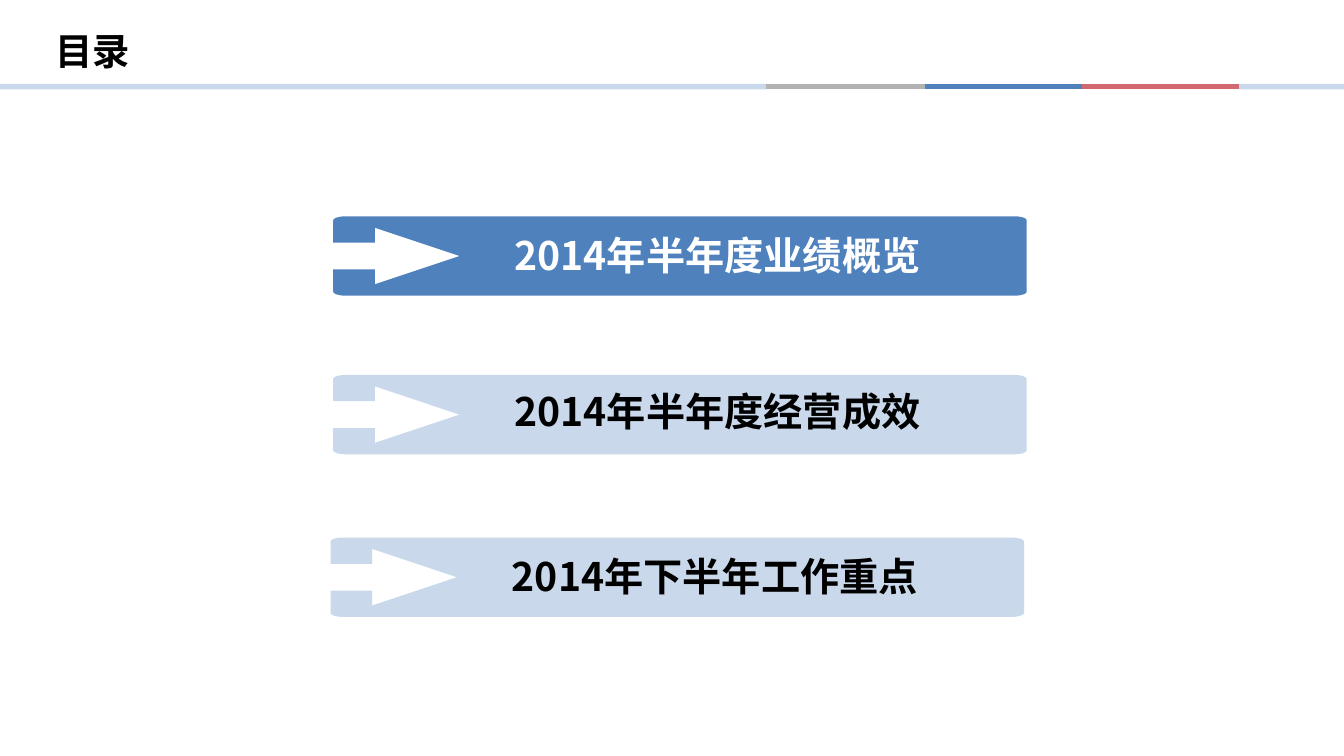
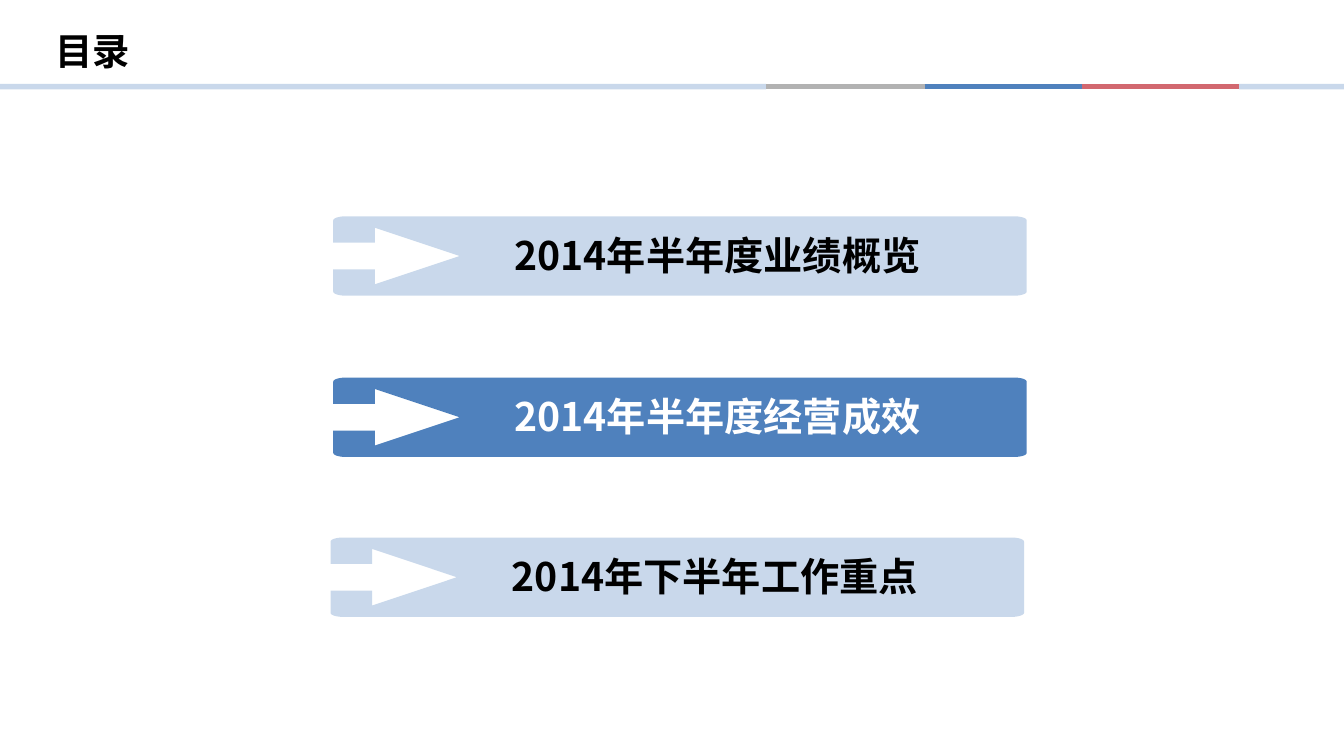
"""Build the two agenda slides, each highlighting one chapter."""
from math import cos, pi, sin

from lxml.etree import SubElement
from pptx import Presentation
from pptx.dml.color import RGBColor
from pptx.enum.shapes import MSO_CONNECTOR
from pptx.enum.text import MSO_ANCHOR, MSO_AUTO_SIZE, PP_ALIGN
from pptx.oxml.ns import qn
from pptx.util import Inches, Pt

BLUE = RGBColor(0x4F, 0x81, 0xBD)
RED = RGBColor(0xD2, 0x68, 0x70)
GRAY = RGBColor(0xB2, 0xB2, 0xB2)
BLACK = RGBColor(0, 0, 0)
WHITE = RGBColor(255, 255, 255)
FONT = "Noto Sans CJK SC"
PALE = 30

TITLE = "目录"
CHAPTERS = ["2014年半年度业绩概览", "2014年半年度经营成效", "2014年下半年工作重点"]
BAR_LEFTS = [2.48, 2.48, 2.46]
AGENDAS = [
    {"active": 0, "bar_tops": [1.61, 2.79, 4], "text_tops": [1.67, 2.83, 4.06]},
    {"active": 1, "bar_tops": [1.61, 2.81, 4], "text_tops": [1.67, 2.87, 4.06]},
]
RULE_TOP = Pt(46.4)
RULE_STOPS = [0, 5.7, 6.88, 8.05, 9.22, 10]
RULE_COLORS = [(BLUE, PALE), (GRAY, 100), (BLUE, 100), (RED, 100), (BLUE, PALE)]

SLIDE_WIDTH = Inches(10)
SLIDE_HEIGHT = SLIDE_WIDTH * 9 // 16
BAR_WIDTH, BAR_HEIGHT = 5.16, 0.59
CORNER_WIDTH, CORNER_HEIGHT = 0.09, 0.03
SHAFT_LENGTH, ARROW_LENGTH = 0.31, 0.94
SHAFT_HALF, HEAD_HALF = 0.1, 0.21
CORNER_STEPS = 6


def set_opacity(shape, percent):
    if percent < 100:
        color = next(shape.element.iter(qn("a:srgbClr")))
        SubElement(color, qn("a:alpha"), val=str(percent * 1000))


def write_text(shape, text, size, color):
    frame = shape.text_frame
    frame.text = text
    frame.word_wrap = True
    frame.auto_size = MSO_AUTO_SIZE.SHAPE_TO_FIT_TEXT
    frame.vertical_anchor = MSO_ANCHOR.TOP
    paragraph = frame.paragraphs[0]
    paragraph.alignment = PP_ALIGN.LEFT
    font = paragraph.runs[0].font
    font.name, font.size, font.bold = FONT, Pt(size), True
    font.color.rgb = color
    latin = next(shape.element.iter(qn("a:latin")))
    east_asian = SubElement(latin.getparent(), qn("a:ea"), typeface=FONT)
    latin.addnext(east_asian)


def add_rule(slide, layout):
    for start, end, (color, opacity) in zip(RULE_STOPS, RULE_STOPS[1:], RULE_COLORS):
        line = slide.shapes.add_connector(
            MSO_CONNECTOR.STRAIGHT, Inches(start), RULE_TOP, Inches(end), RULE_TOP)
        line.line.color.rgb = color
        line.line.width = Pt(3)
        set_opacity(line, opacity)
        SubElement(line.element.spPr, qn("a:effectLst"))
        layout.shapes.element.append(line.element)


def corner(center_x, center_y, start):
    angles = [start + pi / 2 * step / CORNER_STEPS for step in range(CORNER_STEPS + 1)]
    return [(center_x + CORNER_WIDTH * cos(angle), center_y + CORNER_HEIGHT * sin(angle))
            for angle in angles]


def bar_outline():
    right, bottom = BAR_WIDTH - CORNER_WIDTH, BAR_HEIGHT - CORNER_HEIGHT
    middle = BAR_HEIGHT / 2
    arrow = [(0, SHAFT_HALF), (SHAFT_LENGTH, SHAFT_HALF), (SHAFT_LENGTH, HEAD_HALF),
             (ARROW_LENGTH, 0), (SHAFT_LENGTH, -HEAD_HALF), (SHAFT_LENGTH, -SHAFT_HALF),
             (0, -SHAFT_HALF)]
    return (corner(CORNER_WIDTH, CORNER_HEIGHT, pi)
            + corner(right, CORNER_HEIGHT, -pi / 2)
            + corner(right, bottom, 0)
            + corner(CORNER_WIDTH, bottom, pi / 2)
            + [(x, middle + y) for x, y in arrow])


def add_chapter(slide, text, left, bar_top, text_top, active):
    group = slide.shapes.add_group_shape()
    points = [(Inches(left + x), Inches(bar_top + y)) for x, y in bar_outline()]
    builder = group.shapes.build_freeform(*points[0])
    builder.add_line_segments(points[1:], close=True)
    bar = builder.convert_to_shape()
    bar.shadow.inherit = False
    bar.fill.solid()
    bar.fill.fore_color.rgb = BLUE
    bar.line.fill.background()
    set_opacity(bar, 100 if active else PALE)
    label = group.shapes.add_textbox(
        Inches(left + 1.25), Inches(text_top), Inches(3.44), Inches(0.45))
    write_text(label, text, 21, WHITE if active else BLACK)


def add_agenda(presentation, layout, agenda):
    slide = presentation.slides.add_slide(layout)
    title = slide.shapes.title
    title.left, title.top = Inches(0.31), Inches(0.16)
    title.width, title.height = Inches(1.88), Inches(0.44)
    write_text(title, TITLE, 20, BLACK)
    rows = list(zip(CHAPTERS, BAR_LEFTS, agenda["bar_tops"], agenda["text_tops"]))
    for index, row in reversed(list(enumerate(rows))):
        add_chapter(slide, *row, index == agenda["active"])
    return slide


def main():
    presentation = Presentation()
    presentation.slide_width, presentation.slide_height = SLIDE_WIDTH, SLIDE_HEIGHT
    layout = presentation.slide_layouts.get_by_name("Title Only")
    slides = [add_agenda(presentation, layout, agenda) for agenda in AGENDAS]
    add_rule(slides[0], layout)
    presentation.save("out.pptx")


if __name__ == "__main__":
    main()
